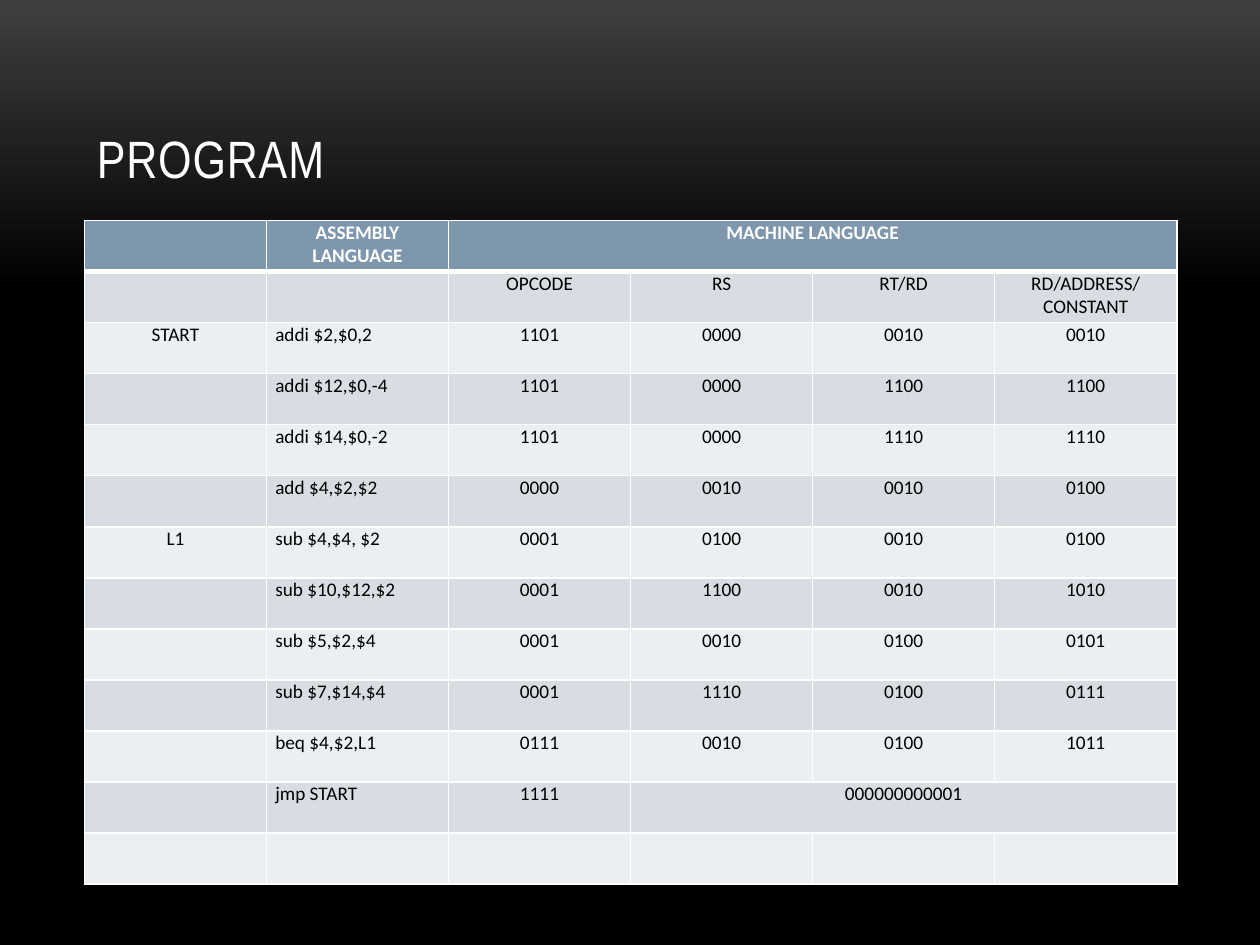
from lxml.etree import SubElement as Sub
from pptx import Presentation
from pptx.dml.color import RGBColor as RGB
from pptx.enum.text import MSO_ANCHOR as Anchor, PP_ALIGN as Align
from pptx.oxml.ns import qn
from pptx.util import Inches, Pt

WHITE = RGB(0xFF, 0xFF, 0xFF)
BLACK = RGB(0x00, 0x00, 0x00)
GREY = RGB(0x3F, 0x3F, 0x3F)
BLUE = RGB(0x7E, 0x97, 0xAD)
DARK = RGB(0xD8, 0xDD, 0xE3)
LIGHT = RGB(0xEC, 0xEF, 0xF1)

ROWS = [
    ["", "ASSEMBLY LANGUAGE", "MACHINE LANGUAGE"],
    ["", "", "OPCODE", "RS", "RT/RD", "RD/ADDRESS/CONSTANT"],
    ["START", "addi $2,$0,2", "1101", "0000", "0010", "0010"],
    ["", "addi $12,$0,-4", "1101", "0000", "1100", "1100"],
    ["", "addi $14,$0,-2", "1101", "0000", "1110", "1110"],
    ["", "add $4,$2,$2", "0000", "0010", "0010", "0100"],
    ["L1", "sub $4,$4, $2", "0001", "0100", "0010", "0100"],
    ["", "sub $10,$12,$2", "0001", "1100", "0010", "1010"],
    ["", "sub $5,$2,$4", "0001", "0010", "0100", "0101"],
    ["", "sub $7,$14,$4", "0001", "1110", "0100", "0111"],
    ["", "beq $4,$2,L1", "0111", "0010", "0100", "1011"],
    ["", "jmp START", "1111", "000000000001"],
    ["", "", "", "", "", ""],
]
COLS = 6


class Deck:
    head = "Arial Narrow"
    body = "Calibri"

    def __init__(self):
        self.prs = Presentation()
        self.prs.slide_width = Inches(10)
        self.prs.slide_height = Inches(7.5)
        self.slide = self.prs.slides.add_slide(self.prs.slide_layouts[6])

    def back(self):
        fill = self.slide.background.fill
        fill.gradient()
        fill.gradient_angle = 270
        for stop, color, pos in zip(fill.gradient_stops, (GREY, BLACK), (0, 0.31)):
            stop.color.rgb = color
            stop.position = pos

    def style(self, para, name, size, color, bold=False):
        for run in para.runs:
            font = run.font
            font.name, font.size, font.bold = name, Pt(size), bold
            font.color.rgb = color

    def title(self, text):
        box = self.slide.shapes.add_textbox(
            Inches(0.67), Inches(0.3), Inches(8.67), Inches(1.25))
        frame = box.text_frame
        frame.word_wrap = True
        frame.vertical_anchor = Anchor.BOTTOM
        frame.text = text
        para = frame.paragraphs[0]
        self.style(para, self.head, 30, WHITE)
        para.runs[0].font._element.set("spc", "50")

    def edge(self, cell, side, width):
        props = cell._tc.get_or_add_tcPr()
        line = Sub(props, qn("a:ln" + side), w=str(Pt(width)))
        fill = Sub(line, qn("a:solidFill"))
        Sub(fill, qn("a:srgbClr"), val=str(WHITE))

    def cell(self, cell, row, col, text):
        for side in "LRTB":
            thick = (row, side) in ((0, "B"), (1, "T"))
            self.edge(cell, side, 3 if thick else 1)
        cell.fill.solid()
        cell.fill.fore_color.rgb = BLUE if row == 0 else DARK if row % 2 else LIGHT
        cell.margin_left = cell.margin_right = Inches(0.07)
        cell.margin_top = cell.margin_bottom = 0
        if text:
            cell.text_frame.text = text
            para = cell.text_frame.paragraphs[0]
            para.alignment = Align.JUSTIFY if col == 1 and row else Align.CENTER
            self.style(para, self.body, 11, BLACK if row else WHITE, row == 0)

    def table(self, rows):
        frame = self.slide.shapes.add_table(
            len(rows), COLS, Inches(0.67), Inches(1.75), Inches(8.67), Inches(5.27))
        grid = frame.table
        for r, texts in enumerate(rows):
            last = len(texts) - 1
            if last < COLS - 1:
                grid.cell(r, last).merge(grid.cell(r, COLS - 1))
            for c in range(COLS):
                text = texts[c] if c <= last else ""
                self.cell(grid.cell(r, c), r, c, text)


def main():
    deck = Deck()
    deck.back()
    deck.title("PROGRAM")
    deck.table(ROWS)
    deck.prs.save("out.pptx")


if __name__ == "__main__":
    main()
